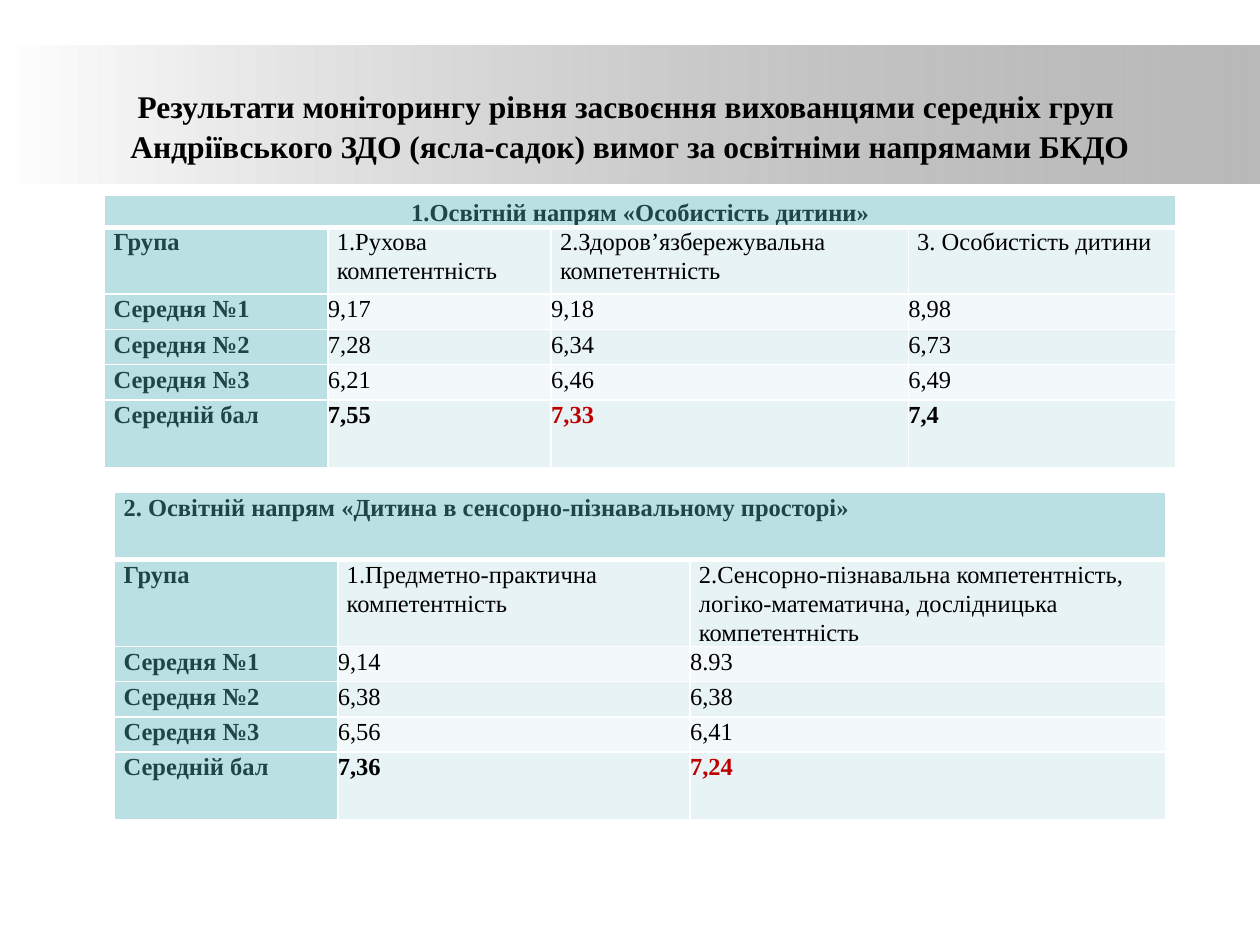
import copy

import lxml.etree
import pptx
import pptx.dml.color
import pptx.enum.shapes
import pptx.enum.text
import pptx.oxml
import pptx.oxml.ns
import pptx.util
from pptx.util import Cm, Pt

FONT = "Times New Roman"
BLACK, WHITE, RED, TEAL = "000000", "FFFFFF", "C00000", "1E4649"
HEAD_FILL, DARK_BAND, LIGHT_BAND = "BBE0E3", "E7F3F4", "F3F9FA"
CENTER = pptx.enum.text.PP_ALIGN.CENTER
MIDDLE = pptx.enum.text.MSO_ANCHOR.MIDDLE

TITLE = ("Результати моніторингу рівня засвоєння вихованцями середніх груп \v"
         "Андріївського ЗДО (ясла-садок) вимог за освітніми напрямами БКДО")

PERSONALITY = [
    ["1.Освітній напрям «Особистість дитини»"],
    ["Група", "1.Рухова компетентність", "2.Здоров’язбережувальна компетентність",
     "3. Особистість дитини"],
    ["Середня №1", "9,17", "9,18", "8,98"],
    ["Середня №2", "7,28", "6,34", "6,73"],
    ["Середня №3", "6,21", "6,46", "6,49"],
    ["Середній бал", "7,55", "7,33", "7,4"],
]
SENSORY = [
    ["2. Освітній напрям «Дитина в сенсорно-пізнавальному просторі»"],
    ["Група", "1.Предметно-практична компетентність",
     "2.Сенсорно-пізнавальна компетентність, логіко-математична, "
     "дослідницька компетентність"],
    ["Середня №1", "9,14", "8.93"],
    ["Середня №2", "6,38", "6,38"],
    ["Середня №3", "6,56", "6,41"],
    ["Середній бал", "7,36", "7,24"],
]
GROUP_HEIGHTS = [0.71, 0.71, 0.71, 1.37]


def rgb(value):
    return pptx.dml.color.RGBColor.from_string(value)


def format_paragraph(paragraph, size, color, bold, spacing=1.07, after=8):
    paragraph.line_spacing = spacing
    paragraph.space_after = Pt(after)
    for run in paragraph.runs:
        run.font.name = FONT
        run.font.size = Pt(size)
        run.font.bold = bold
        run.font.color.rgb = rgb(color)


def add_band(slide):
    """Fading grey strip behind the title."""
    band = slide.shapes.add_shape(pptx.enum.shapes.MSO_SHAPE.RECTANGLE,
                                  Cm(0), Cm(0.91), Cm(25.4), Cm(2.8))
    band.shadow.inherit = False
    band.line.fill.background()
    band.fill.gradient()
    band.fill.gradient_angle = 0
    for stop, position, color in zip(band.fill.gradient_stops, (0, 1), (WHITE, "808080")):
        stop.position = position
        stop.color.rgb = rgb(color)
    grey = band._element.spPr.findall(".//" + pptx.oxml.ns.qn("a:srgbClr"))[-1]
    lxml.etree.SubElement(grey, pptx.oxml.ns.qn("a:alpha"), val="54000")
    slide.shapes._spTree.insert(2, band._element)


def set_title(slide):
    title = slide.shapes.title
    title.left, title.top, title.width, title.height = Cm(1.5), Cm(1.32), Cm(22.4), Cm(2.39)
    frame = title.text_frame
    frame.text = TITLE
    frame.word_wrap = True
    frame.auto_size = pptx.enum.text.MSO_AUTO_SIZE.NONE
    frame.vertical_anchor = MIDDLE
    paragraph = frame.paragraphs[0]
    paragraph.alignment = CENTER
    format_paragraph(paragraph, 18, BLACK, True)
    line_break = paragraph._p.find(pptx.oxml.ns.qn("a:br"))
    break_format = lxml.etree.SubElement(line_break, pptx.oxml.ns.qn("a:rPr"))
    break_format.set("sz", "1800")


def set_borders(cell, top, bottom):
    """White borders; the side lines are 1 pt, top and bottom as given."""
    properties = cell._tc.get_or_add_tcPr()
    sides = [("L", 1), ("R", 1), ("T", top), ("B", bottom)]
    for index, (side, width) in enumerate(sides):
        properties.insert(index, pptx.oxml.parse_xml(
            f'<a:ln{side} {pptx.oxml.ns.nsdecls("a")} w="{Pt(width)}">'
            f'<a:solidFill><a:srgbClr val="{WHITE}"/></a:solidFill></a:ln{side}>'))


def fill_cell(cell, text, fill, color, bold, margin, after):
    cell.fill.solid()
    cell.fill.fore_color.rgb = rgb(fill)
    cell.margin_left = cell.margin_right = Cm(margin)
    cell.margin_top = cell.margin_bottom = Cm(0)
    cell.text_frame.text = text
    format_paragraph(cell.text_frame.paragraphs[0], 14, color, bold, after=after)


def add_results(slide, rows, left, top, widths, heights):
    """Score table; the lowest average in the last row is red."""
    table = slide.shapes.add_table(len(rows), len(widths), Cm(left), Cm(top),
                                   Cm(sum(widths)), Cm(sum(heights))).table
    table.first_row = table.horz_banding = False
    for column, width in zip(table.columns, widths):
        column.width = Cm(width)
    for row, height in zip(table.rows, heights):
        row.height = Cm(height)
    table.cell(0, 0).merge(table.cell(0, len(widths) - 1))

    last = len(rows) - 1
    lowest = min(rows[last][1:], key=lambda score: float(score.replace(",", ".")))
    for r, texts in enumerate(rows):
        for c in range(len(widths)):
            cell = table.cell(r, c)
            text = texts[c] if c < len(texts) else ""
            if r == 0 or c == 0:
                fill_cell(cell, text, HEAD_FILL, TEAL, True, 0.18, 8)
            else:
                is_score = r > 1
                color = RED if r == last and text == lowest else BLACK
                fill_cell(cell, text, DARK_BAND if r % 2 else LIGHT_BAND, color, r == last,
                          0 if is_score else 0.18, 0 if is_score else 8)
                if r == last:
                    cell.fill.fore_color.rgb = rgb(DARK_BAND)
            set_borders(cell, 3 if r == 1 else 1, 3 if r == 0 else 1)
    return table


def main():
    presentation = pptx.Presentation()
    presentation.slide_width, presentation.slide_height = Cm(25.4), Cm(19.05)
    slide = presentation.slides.add_slide(presentation.slide_layouts[5])
    add_band(slide)
    set_title(slide)

    personality = add_results(slide, PERSONALITY, 2.11, 3.94, [4.5, 4.5, 7.2, 5.4],
                              [0.64, 1.35] + GROUP_HEIGHTS)
    heading = personality.cell(0, 0)
    heading.vertical_anchor = MIDDLE
    heading.text_frame.paragraphs[0].alignment = CENTER
    heading.text_frame.paragraphs[0].line_spacing = 1.15

    add_results(slide, SENSORY, 2.31, 9.93, [4.5, 7.1, 9.6], [1.35, 1.73] + GROUP_HEIGHTS)
    presentation.save("out.pptx")


if __name__ == "__main__":
    main()
